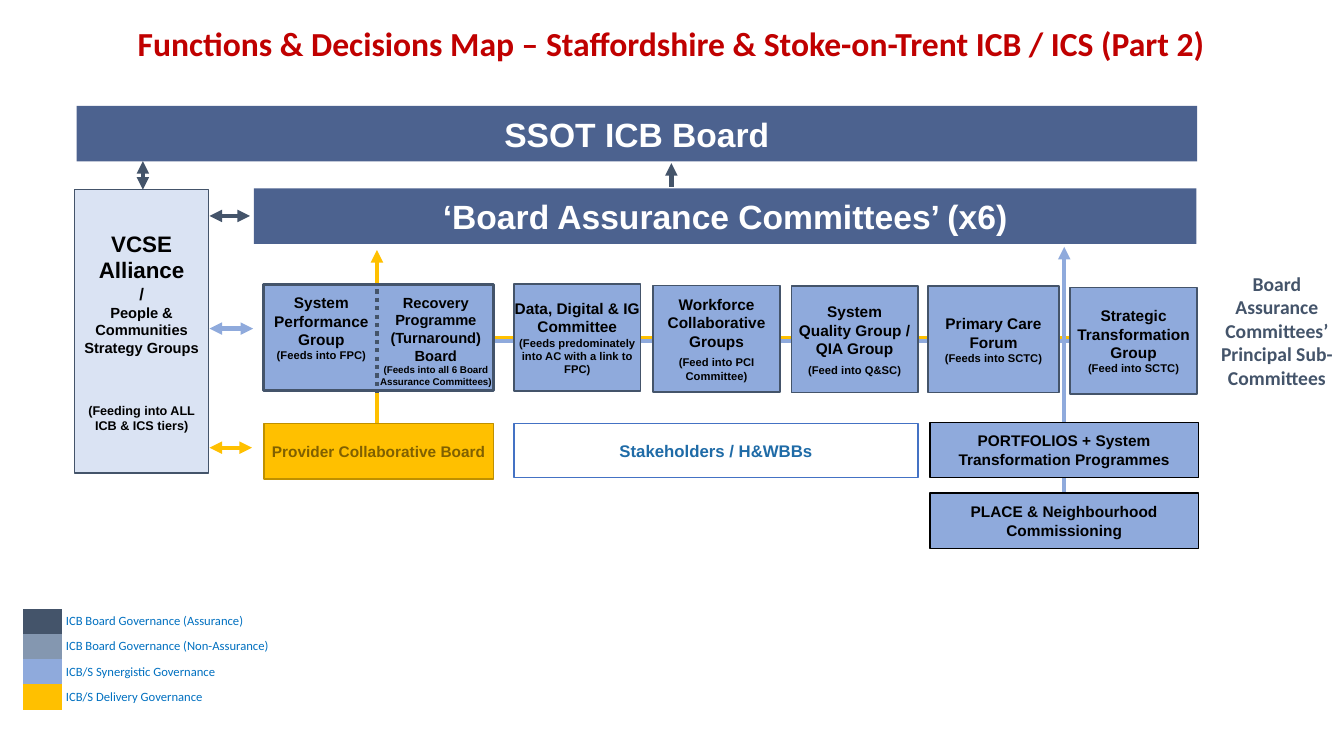
from dataclasses import dataclass

import lxml.etree
import pptx
import pptx.dml.color
import pptx.enum.shapes
import pptx.enum.text
import pptx.oxml.ns
import pptx.util

Cm = pptx.util.Cm
Pt = pptx.util.Pt
Anchor = pptx.enum.text.MSO_ANCHOR
Align = pptx.enum.text.PP_ALIGN


@dataclass(frozen=True)
class Theme:
    navy: str = "002060"
    slate: str = "44546A"
    grey: str = "8497B0"
    blue: str = "8FAADC"
    pale: str = "DAE3F3"
    gold: str = "FFC000"
    dark_gold: str = "BF9000"
    brown: str = "806000"
    outline_blue: str = "4472C4"
    stakeholder: str = "1F6BA7"
    legend: str = "0070C0"
    red: str = "C00000"
    black: str = "000000"
    white: str = "FFFFFF"
    body_font: str = "Arial"
    label_font: str = "Calibri"
    heading: float = 24
    alliance: float = 16
    side: float = 14
    medium: float = 12
    body: float = 11
    compact: float = 10.5
    small: float = 9
    note: float = 8
    tiny: float = 7


THEME = Theme()


@dataclass(frozen=True)
class Line:
    text: str
    size: float = THEME.body
    before: float = 0


@dataclass(frozen=True)
class Box:
    """Text block; lengths in centimetres, insets as (side, top, bottom)."""
    left: float
    top: float
    width: float
    height: float
    lines: tuple[Line, ...] = ()
    fill: str | None = THEME.blue
    border: str | None = THEME.slate
    weight: float = 1
    color: str = THEME.black
    font: str = THEME.body_font
    insets: tuple[float, float, float] = (0, 0.1, 0.1)
    anchor: Anchor = Anchor.MIDDLE
    spacing: float = 1.0
    opacity: int = 100


@dataclass(frozen=True)
class Link:
    start: tuple[float, float]
    end: tuple[float, float]
    color: str
    ends: tuple[str, ...] = ()
    dash: str | None = None


def rgb(value: str) -> pptx.dml.color.RGBColor:
    return pptx.dml.color.RGBColor.from_string(value)


def add_element(parent, tag: str, **attributes: str):
    element = lxml.etree.SubElement(parent, pptx.oxml.ns.qn(tag))
    for name, value in attributes.items():
        element.set(name, value)
    return element


def format_runs(paragraph, font: str, size: float, color: str, bold: bool) -> None:
    for run in paragraph.runs:
        run.font.name = font
        run.font.size = Pt(size)
        run.font.color.rgb = rgb(color)
        run.font.bold = bold


def draw_box(slide, box: Box) -> None:
    frame = tuple(Cm(n) for n in (box.left, box.top, box.width, box.height))
    if box.fill is None:
        shape = slide.shapes.add_textbox(*frame)
    else:
        shape = slide.shapes.add_shape(pptx.enum.shapes.MSO_SHAPE.RECTANGLE, *frame)
        shape.shadow.inherit = False
        shape.fill.solid()
        shape.fill.fore_color.rgb = rgb(box.fill)
        if box.opacity < 100:
            color = shape.element.spPr.find(".//" + pptx.oxml.ns.qn("a:srgbClr"))
            add_element(color, "a:alpha", val=str(box.opacity * 1000))
        if box.border is None:
            shape.line.fill.background()
        else:
            shape.line.color.rgb = rgb(box.border)
            shape.line.width = Pt(box.weight)

    text_frame = shape.text_frame
    text_frame.word_wrap = True
    text_frame.vertical_anchor = box.anchor
    side, top, bottom = (Cm(n) for n in box.insets)
    text_frame.margin_left = text_frame.margin_right = side
    text_frame.margin_top, text_frame.margin_bottom = top, bottom
    text_frame.text = "\n".join(line.text for line in box.lines)
    for paragraph, line in zip(text_frame.paragraphs, box.lines):
        paragraph.alignment = Align.CENTER
        paragraph.line_spacing = box.spacing
        paragraph.space_before = Pt(line.before)
        format_runs(paragraph, box.font, line.size, box.color, True)


def draw_link(slide, link: Link) -> None:
    connector = slide.shapes.add_connector(
        pptx.enum.shapes.MSO_CONNECTOR.STRAIGHT,
        *(Cm(n) for n in link.start + link.end))
    connector.line.color.rgb = rgb(link.color)
    connector.line.width = Pt(3)
    outline = connector.line._get_or_add_ln()
    if link.dash:
        add_element(outline, "a:prstDash", val=link.dash)
    for end in link.ends:
        add_element(outline, end, type="triangle")
    add_element(connector.element.spPr, "a:effectLst")


def draw_legend(slide, entries: tuple[tuple[str, str], ...]) -> None:
    table = slide.shapes.add_table(
        len(entries), 2, Cm(0.58), Cm(15.34), Cm(6.36), Cm(2.54)).table
    table.first_row = table.horz_banding = False
    style = table._tbl.tblPr.find(pptx.oxml.ns.qn("a:tableStyleId"))
    style.text = "{2D5ABB26-0587-4C30-8999-92F81FD0307C}"  # no style, no grid
    table.columns[0].width, table.columns[1].width = Cm(0.98), Cm(5.38)
    for row, (color, label) in enumerate(entries):
        swatch, caption = table.cell(row, 0), table.cell(row, 1)
        for cell in (swatch, caption):
            cell.margin_left = cell.margin_right = Cm(0.1)
            cell.margin_top = cell.margin_bottom = 0
            cell.vertical_anchor = Anchor.MIDDLE
        swatch.fill.solid()
        swatch.fill.fore_color.rgb = rgb(color)
        add_element(swatch.text_frame.paragraphs[0]._p, "a:endParaRPr",
                    sz=str(int(THEME.small * 100)))
        caption.fill.background()
        caption.text_frame.text = label
        format_runs(caption.text_frame.paragraphs[0], THEME.label_font,
                    THEME.small, THEME.legend, False)


def note(text: str, before: float = 0) -> Line:
    return Line(text, THEME.note, before)


def bar(left: float, top: float, width: float, text: str) -> Box:
    return Box(left, top, width, 1.4, (Line(text, THEME.heading),), THEME.navy,
               None, color=THEME.white, insets=(0.25, 0.13, 0.13), opacity=70)


def group(left: float, top: float, *lines: Line, width: float = 3.2) -> Box:
    return Box(left, top, width, 2.69, lines)


def programme(top: float, text: str) -> Box:
    return Box(23.44, top, 6.76, 1.4, (Line(text),), border=THEME.black,
               insets=(0.1, 0.13, 0.13))


UP = ("a:headEnd",)
BOTH = ("a:headEnd", "a:tailEnd")

# Reporting lines that run behind the boxes
BACK_LINKS = (
    Link((9.5, 6.3), (9.5, 10.8), THEME.gold, UP),
    Link((9.68, 8.51), (28.68, 8.51), THEME.gold),
    Link((26.82, 6.22), (26.82, 12.42), THEME.blue, UP),
    Link((12.42, 8.59), (26.97, 8.59), THEME.blue),
)

BOXES = (
    # Title and side label
    Box(1.88, 0.61, 30.07, 1.09,
        (Line("Functions & Decisions Map – Staffordshire & Stoke-on-Trent ICB / ICS (Part 2)",
              THEME.heading),),
        None, color=THEME.red, font=THEME.label_font, insets=(0.1, 0.1, 0.1), spacing=0.9),
    Box(30.35, 6.71, 3.66, 3.25,
        (Line("Board Assurance Committees’ Principal Sub-Committees", THEME.side),),
        None, color=THEME.slate, font=THEME.label_font, insets=(0.25, 0.13, 0.13),
        anchor=Anchor.TOP),
    # Board tiers
    bar(1.93, 2.67, 28.24, "SSOT ICB Board"),
    bar(6.4, 4.75, 23.75, "‘Board Assurance Committees’ (x6)"),
    # Alliance column
    Box(1.88, 4.78, 3.38, 7.14,
        (Line("VCSE Alliance", THEME.alliance), Line("/", THEME.medium),
         Line("People & Communities Strategy Groups", THEME.compact),
         Line("(Feeding into ALL", THEME.small, 33), Line("ICB & ICS tiers)", THEME.small)),
        THEME.pale, insets=(0.1, 0.1, 0.1)),
    # Sub-committees
    group(12.95, 7.16, Line("Data, Digital & IG Committee"),
          note("(Feeds predominately into AC with a link to FPC)")),
    group(16.46, 7.19, Line("Workforce Collaborative Groups"),
          note("(Feed into PCI Committee)", 3.5)),
    group(19.94, 7.21, Line("System"), Line("Quality Group / QIA Group"),
          note("(Feed into Q&SC)", 3.5)),
    group(23.39, 7.21, Line("Primary Care Forum"), note("(Feeds into SCTC)"), width=3.3),
    group(26.97, 7.24, Line("Strategic Transformation Group"), note("(Feed into SCTC)")),
    # Performance and recovery pair
    Box(6.65, 7.16, 5.79, 2.69, weight=2.25),
    Box(6.68, 7.24, 2.84, 2.36,
        (Line("System Performance Group"), note("(Feeds into FPC)")),
        None, insets=(0, 0.1, 0.42)),
    Box(9.55, 7.24, 2.87, 2.69,
        (Line("Recovery Programme (Turnaround) Board", THEME.compact),
         Line("(Feeds into all 6 Board Assurance Committees)", THEME.tiny)), None),
    # Delivery tier
    Box(6.65, 10.67, 5.79, 1.4, (Line("Provider Collaborative Board"),), THEME.gold,
        THEME.dark_gold, color=THEME.brown, insets=(0.1, 0.13, 0.13)),
    Box(12.95, 10.67, 10.19, 1.37, (Line("Stakeholders / H&WBBs", THEME.medium),),
        THEME.white, THEME.outline_blue, color=THEME.stakeholder, insets=(0.25, 0.13, 0.13)),
    programme(10.64, "PORTFOLIOS + System Transformation Programmes"),
    programme(12.42, "PLACE & Neighbourhood Commissioning"),
)

# Arrows between tiers and the divider inside the pair
FRONT_LINKS = (
    Link((6.3, 5.44), (5.28, 5.44), THEME.slate, BOTH),
    Link((3.6, 4.06), (3.6, 4.78), THEME.slate, BOTH),
    Link((16.92, 4.11), (16.92, 4.72), THEME.slate, UP),
    Link((6.38, 8.28), (5.28, 8.28), THEME.blue, BOTH),
    Link((6.35, 11.28), (5.28, 11.28), THEME.gold, BOTH),
    Link((9.5, 7.29), (9.5, 9.91), THEME.slate, dash="sysDot"),
)

LEGEND = (
    (THEME.slate, "ICB Board Governance (Assurance)"),
    (THEME.grey, "ICB Board Governance (Non-Assurance)"),
    (THEME.blue, "ICB/S Synergistic Governance"),
    (THEME.gold, "ICB/S Delivery Governance"),
)


def main() -> None:
    presentation = pptx.Presentation()
    presentation.slide_width, presentation.slide_height = Cm(33.87), Cm(19.05)
    slide = presentation.slides.add_slide(presentation.slide_layouts[6])
    for link in BACK_LINKS:
        draw_link(slide, link)
    for box in BOXES:
        draw_box(slide, box)
    for link in FRONT_LINKS:
        draw_link(slide, link)
    draw_legend(slide, LEGEND)
    presentation.save("out.pptx")


if __name__ == "__main__":
    main()
